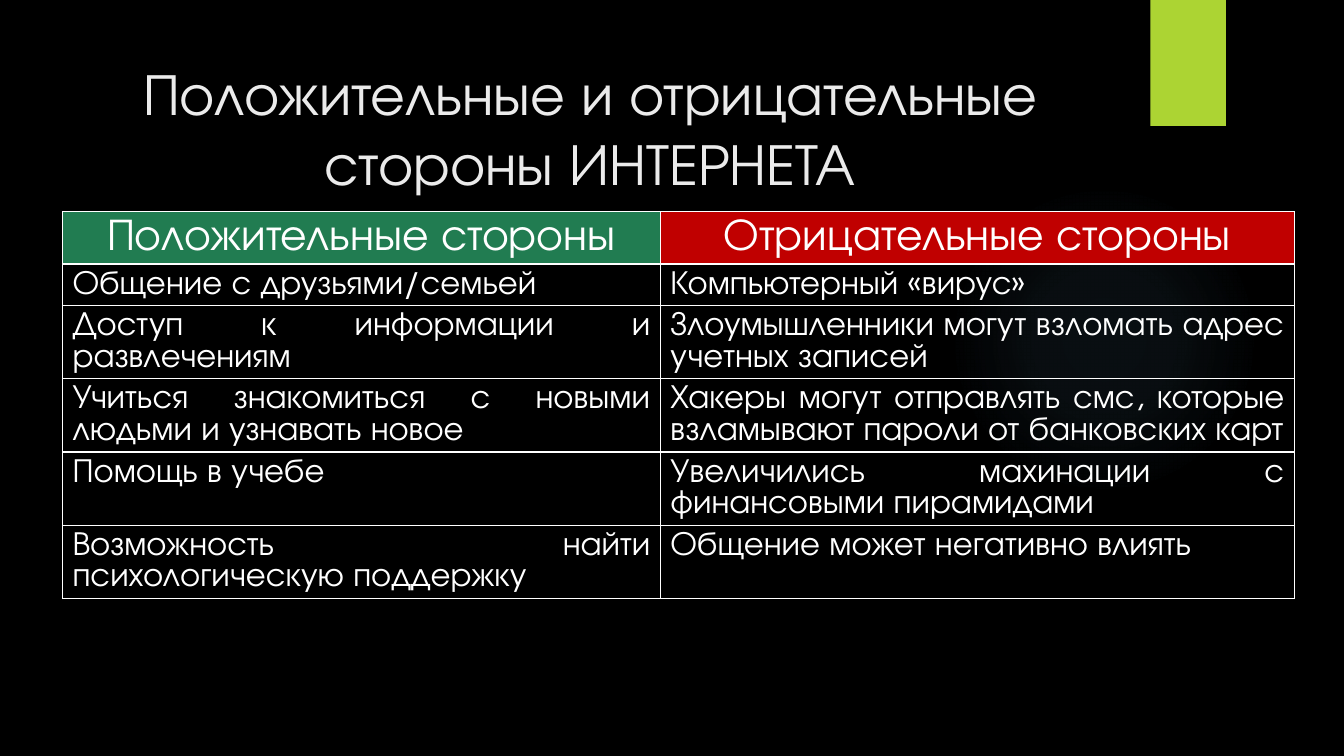
from dataclasses import dataclass

from lxml import etree
from pptx import Presentation
from pptx.dml.color import RGBColor
from pptx.enum.shapes import MSO_SHAPE as Shape
from pptx.enum.text import MSO_ANCHOR as Anchor, MSO_AUTO_SIZE as AutoSize, PP_ALIGN as Align
from pptx.oxml.ns import qn
from pptx.util import Inches, Pt


@dataclass(frozen=True)
class Theme:
    font: str = "TeX Gyre Adventor"
    background: str = "000000"
    title: str = "EBEBEB"
    text: str = "FFFFFF"
    border: str = "FFFFFF"
    accent: str = "ACD433"
    glow: str = "7AC4F0"
    positive: str = "217C51"
    negative: str = "C00000"
    title_size: float = 42
    header_size: float = 32
    body_size: float = 24
    title_leading: float = 50
    header_leading: float = 30
    body_leading: float = 22.5


THEME = Theme()
TITLE = "Положительные и отрицательные стороны ИНТЕРНЕТА"
HEADERS = (
    ("Положительные стороны", THEME.positive),
    ("Отрицательные стороны", THEME.negative),
)
SIDES = (
    ("Общение с друзьями/семьей", "Компьютерный «вирус»"),
    ("Доступ к информации и развлечениям",
     "Злоумышленники могут взломать адрес учетных записей"),
    ("Учиться знакомиться с новыми людьми и узнавать новое",
     "Хакеры могут отправлять смс, которые взламывают пароли от банковских карт"),
    ("Помощь в учебе", "Увеличились махинации с финансовыми пирамидами"),
    ("Возможность найти психологическую поддержку", "Общение может негативно влиять"),
)
COLUMN_WIDTHS = (5.93, 6.29)
HEADER_HEIGHT = 0.52
LINE_HEIGHT = 0.41
TWO_LINE_HEIGHT = 0.72
GLOW_STOPS = ((0, 7), (36, 6), (69, 0))  # position and opacity, percent


def rgb(color):
    return RGBColor.from_string(color)


def write(text_frame, text, size, leading, color, alignment):
    paragraph = text_frame.paragraphs[0]
    paragraph.alignment = alignment
    paragraph.line_spacing = Pt(leading)
    paragraph.space_before = Pt(0)
    run = paragraph.add_run()
    run.text = text
    run.font.name = THEME.font
    run.font.size = Pt(size)
    run.font.bold = False
    run.font.color.rgb = rgb(color)


def add_plain_shape(slide, kind, left, top, width, height, color):
    shape = slide.shapes.add_shape(
        kind, Inches(left), Inches(top), Inches(width), Inches(height))
    shape.shadow.inherit = False
    shape.fill.solid()
    shape.fill.fore_color.rgb = rgb(color)
    shape.line.fill.background()
    return shape


def add_glow(slide):
    shape = add_plain_shape(slide, Shape.OVAL, 9.41, 1.83, 3.08, 3.08, THEME.glow)
    # Radial gradient that fades to full transparency
    gradient = etree.Element(qn("a:gradFill"), rotWithShape="1")
    stops = etree.SubElement(gradient, qn("a:gsLst"))
    for position, opacity in GLOW_STOPS:
        stop = etree.SubElement(stops, qn("a:gs"), pos=str(position * 1000))
        color = etree.SubElement(stop, qn("a:srgbClr"), val=THEME.glow)
        etree.SubElement(color, qn("a:alpha"), val=str(opacity * 1000))
    path = etree.SubElement(gradient, qn("a:path"), path="circle")
    etree.SubElement(path, qn("a:fillToRect"), l="50000", t="50000", r="50000", b="50000")
    properties = shape._element.spPr
    properties.replace(properties.find(qn("a:solidFill")), gradient)


def set_title(slide):
    title = slide.shapes.title
    title.left, title.top = Inches(0.71), Inches(0.5)
    title.width, title.height = Inches(10.29), Inches(1.53)
    frame = title.text_frame
    frame.word_wrap = True
    frame.auto_size = AutoSize.NONE
    frame.vertical_anchor = Anchor.MIDDLE
    write(frame, TITLE, THEME.title_size, THEME.title_leading, THEME.title, Align.CENTER)
    # Bring the title in front of the decoration
    slide.shapes._spTree.append(title._element)


def set_borders(cell):
    properties = cell._tc.get_or_add_tcPr()
    for index, side in enumerate(("lnL", "lnR", "lnT", "lnB")):
        line = etree.Element(qn(f"a:{side}"), w=str(Pt(1)))
        fill = etree.SubElement(line, qn("a:solidFill"))
        etree.SubElement(fill, qn("a:srgbClr"), val=THEME.border)
        properties.insert(index, line)


def fill_cell(cell, text, size, leading, alignment, color=None):
    write(cell.text_frame, text, size, leading, THEME.text, alignment)
    cell.vertical_anchor = Anchor.TOP
    if color:
        cell.fill.solid()
        cell.fill.fore_color.rgb = rgb(color)
    else:
        cell.fill.background()
    set_borders(cell)


def add_sides_table(slide):
    heights = [HEADER_HEIGHT, LINE_HEIGHT] + [TWO_LINE_HEIGHT] * (len(SIDES) - 1)
    table = slide.shapes.add_table(
        len(heights), len(COLUMN_WIDTHS), Inches(0.62), Inches(2.1),
        Inches(sum(COLUMN_WIDTHS)), Inches(sum(heights))).table
    table.horz_banding = False
    table.first_row = False
    for column, width in zip(table.columns, COLUMN_WIDTHS):
        column.width = Inches(width)
    for row, height in zip(table.rows, heights):
        row.height = Inches(height)
    for column, (text, color) in enumerate(HEADERS):
        fill_cell(table.cell(0, column), text, THEME.header_size,
                  THEME.header_leading, Align.CENTER, color)
    for row, texts in enumerate(SIDES, start=1):
        for column, text in enumerate(texts):
            fill_cell(table.cell(row, column), text, THEME.body_size,
                      THEME.body_leading, Align.JUSTIFY)


def main():
    presentation = Presentation()
    presentation.slide_width = Inches(13.33)
    presentation.slide_height = Inches(7.5)
    slide = presentation.slides.add_slide(presentation.slide_layouts[5])
    slide.background.fill.solid()
    slide.background.fill.fore_color.rgb = rgb(THEME.background)

    # Decoration
    add_glow(slide)
    add_plain_shape(slide, Shape.RECTANGLE, 11.41, 0, 0.75, 1.25, THEME.accent)

    # Content
    set_title(slide)
    add_sides_table(slide)
    presentation.save("out.pptx")


if __name__ == "__main__":
    main()
